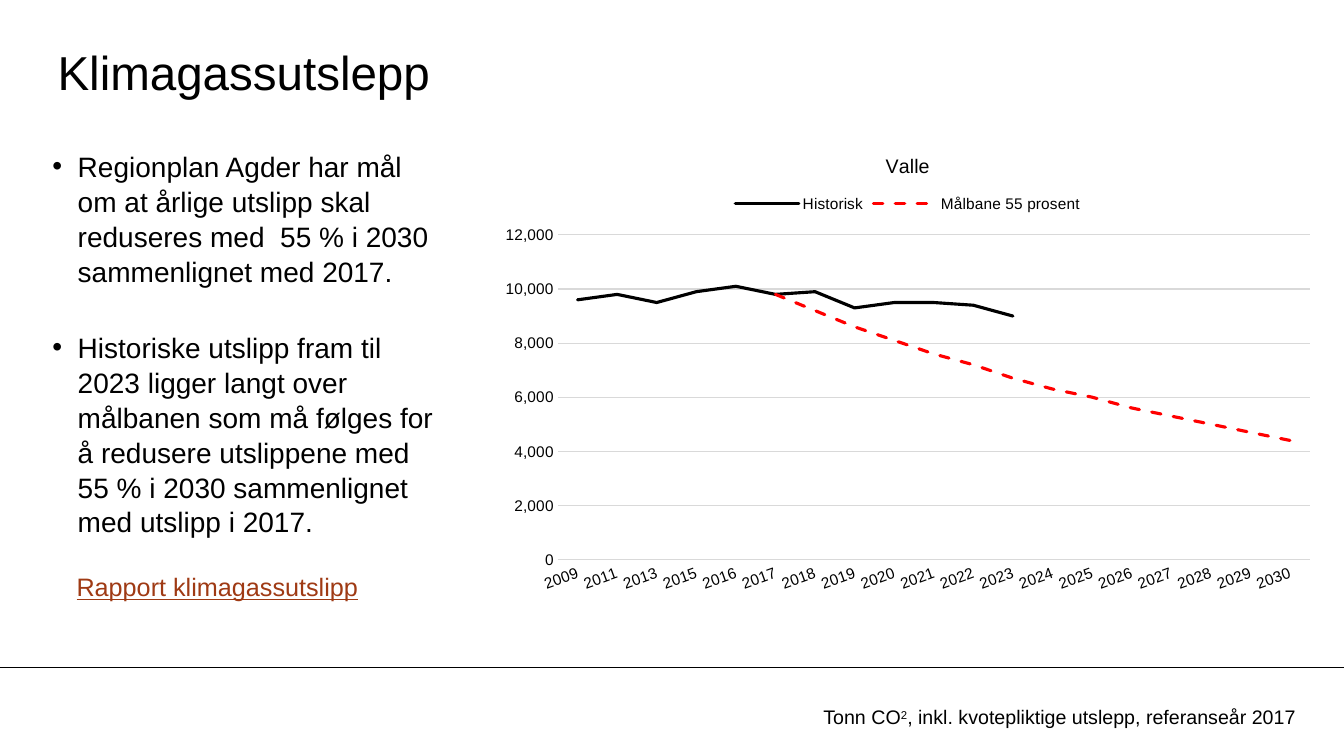
from lxml.etree import SubElement
from pptx import Presentation
from pptx.chart.data import CategoryChartData
from pptx.dml.color import RGBColor
from pptx.enum.chart import XL_CHART_TYPE, XL_LEGEND_POSITION, XL_TICK_MARK
from pptx.enum.dml import MSO_LINE
from pptx.enum.shapes import MSO_CONNECTOR
from pptx.enum.text import MSO_ANCHOR, PP_ALIGN
from pptx.oxml.ns import qn
from pptx.util import Cm, Pt

BLACK, GREY, RED, RUST = "000000", "D9D9D9", "FF0000", "9F3A14"
WIDTH, HEIGHT = 33.87, 19.05

BULLETS = [
    "Regionplan Agder har mål om at årlige utslipp skal reduseres med  55 % i 2030 "
    "sammenlignet med 2017.",
    "Historiske utslipp fram til 2023 ligger langt over målbanen som må følges for å "
    "redusere utslippene med 55 % i 2030 sammenlignet med utslipp i 2017.",
]
YEARS = [2009, 2011, 2013, *range(2015, 2031)]
HISTORIC = [9600, 9800, 9500, 9900, 10100, 9800, 9900, 9300, 9500, 9500, 9400, 9000]
TARGET = [9800, 9200, 8600, 8100, 7600, 7200, 6700, 6300, 6000, 5600, 5300, 5000, 4700, 4400]
SERIES = [
    ("Historisk", HISTORIC + [None] * (len(YEARS) - len(HISTORIC)), BLACK, MSO_LINE.SOLID),
    ("Målbane 55 prosent", [None] * (len(YEARS) - len(TARGET)) + TARGET, RED, MSO_LINE.DASH),
]


def rgb(value):
    return RGBColor.from_string(value)


def set_attrs(obj, formats):
    for name, value in formats.items():
        setattr(obj, name, value)


def style_font(font, size, color=BLACK, **extra):
    set_attrs(font, {"name": "Arial", "size": Pt(size), "bold": False, **extra})
    font.color.rgb = rgb(color)


def style_line(line, color, width):
    line.color.rgb = rgb(color)
    line.width = Pt(width)


def place(sp, box):
    set_attrs(sp, dict(zip(("left", "top", "width", "height"), map(Cm, box))))


def add_text(s, box, inset=None):
    tf = s.shapes.add_textbox(*map(Cm, box)).text_frame
    tf.word_wrap = True
    if inset is not None:
        set_insets(tf, inset)
    return tf


def set_insets(tf, inset):
    sides = ("margin_left", "margin_top", "margin_right", "margin_bottom")
    set_attrs(tf, dict.fromkeys(sides, Cm(inset)))


def add_run(p, text, size, color=BLACK, **extra):
    r = p.add_run()
    r.text = text
    style_font(r.font, size, color, **extra)
    return r


def add_title(s, box):
    sp = s.shapes.title
    place(sp, box)
    tf = sp.text_frame
    set_insets(tf, 0)
    set_attrs(tf, {"vertical_anchor": MSO_ANCHOR.MIDDLE, "word_wrap": True})
    p = tf.paragraphs[0]
    p.alignment = PP_ALIGN.LEFT
    add_run(p, "Klimagassutslepp", 34)


def add_bullets(s, box):
    tf = add_text(s, box, 0)
    for i, text in enumerate(BULLETS):
        p = tf.add_paragraph() if i else tf.paragraphs[0]
        p.line_spacing = 1.04
        if i:
            p.space_before = Pt(29.5)
        pPr = p._p.get_or_add_pPr()
        pPr.set("marL", str(Cm(0.64)))
        pPr.set("indent", str(-Cm(0.64)))
        SubElement(pPr, qn("a:buFont")).set("typeface", "Arial")
        SubElement(pPr, qn("a:buChar")).set("char", "•")
        add_run(p, text, 20)


def add_report(s, box):
    p = add_text(s, box).paragraphs[0]
    add_run(p, "Rapport klimagassutslipp", 18, RUST, underline=True)


def add_emission_chart(s, box):
    data = CategoryChartData()
    data.categories = [str(year) for year in YEARS]
    for name, values, _, _ in SERIES:
        data.add_series(name, values)
    chart = s.shapes.add_chart(XL_CHART_TYPE.LINE, *map(Cm, box), data).chart
    style_font(chart.font, 11)

    chart.has_title = True
    p = chart.chart_title.text_frame.paragraphs[0]
    add_run(p, "Valle", 14)
    chart.has_legend = True
    set_attrs(chart.legend, {"position": XL_LEGEND_POSITION.TOP, "include_in_layout": False})
    style_font(chart.legend.font, 11)

    plot = chart.plots[0]
    plot.vary_by_categories = False
    for series, (_, _, color, dash) in zip(plot.series, SERIES):
        series.smooth = False
        style_line(series.format.line, color, 2.25)
        series.format.line.dash_style = dash
        series.format.line._ln.set("cap", "rnd")

    years, tonnes = chart.category_axis, chart.value_axis
    set_attrs(tonnes, {"minimum_scale": 0, "maximum_scale": 12000, "major_unit": 2000})
    for axis, code in ((years, "0"), (tonnes, "#,##0")):
        set_attrs(axis, {"major_tick_mark": XL_TICK_MARK.NONE,
                         "minor_tick_mark": XL_TICK_MARK.NONE})
        set_attrs(axis.tick_labels, {"number_format": code, "number_format_is_linked": False})
        style_font(axis.tick_labels.font, 11)
    style_line(years.format.line, GREY, 0.75)
    tonnes.format.line.fill.background()
    style_line(tonnes.major_gridlines.format.line, GREY, 0.75)
    years._element.find(qn("c:txPr")).find(qn("a:bodyPr")).set("rot", "-1200000")


def add_footer(s, box):
    left, top, width, height = box
    rule = s.shapes.add_connector(MSO_CONNECTOR.STRAIGHT, Cm(left), Cm(top),
                                  Cm(left + width), Cm(top))
    style_line(rule.line, BLACK, 0.75)
    SubElement(rule._element.spPr, qn("a:effectLst"))
    p = add_text(s, (left + 20.5, top + 0.84, 12.93, height - 0.84)).paragraphs[0]
    add_run(p, "Tonn CO", 14)
    add_run(p, "2", 14)._r.get_or_add_rPr().set("baseline", "30000")
    add_run(p, ", inkl. kvotepliktige utslepp, referanseår 2017", 14)


def main():
    prs = Presentation()
    set_attrs(prs, {"slide_width": Cm(WIDTH), "slide_height": Cm(HEIGHT)})
    s = prs.slides.add_slide(prs.slide_layouts[5])
    add_title(s, (1.45, 0.86, 28.2, 1.9))
    add_bullets(s, (1.32, 3.73, 9.68, 9.75))
    add_report(s, (1.68, 14.27, 8.03, 1.02))
    add_emission_chart(s, (12.32, 3.4, 21.11, 11.76))
    add_footer(s, (0, 16.81, WIDTH, HEIGHT - 16.81))
    prs.save("out.pptx")


if __name__ == "__main__":
    main()
